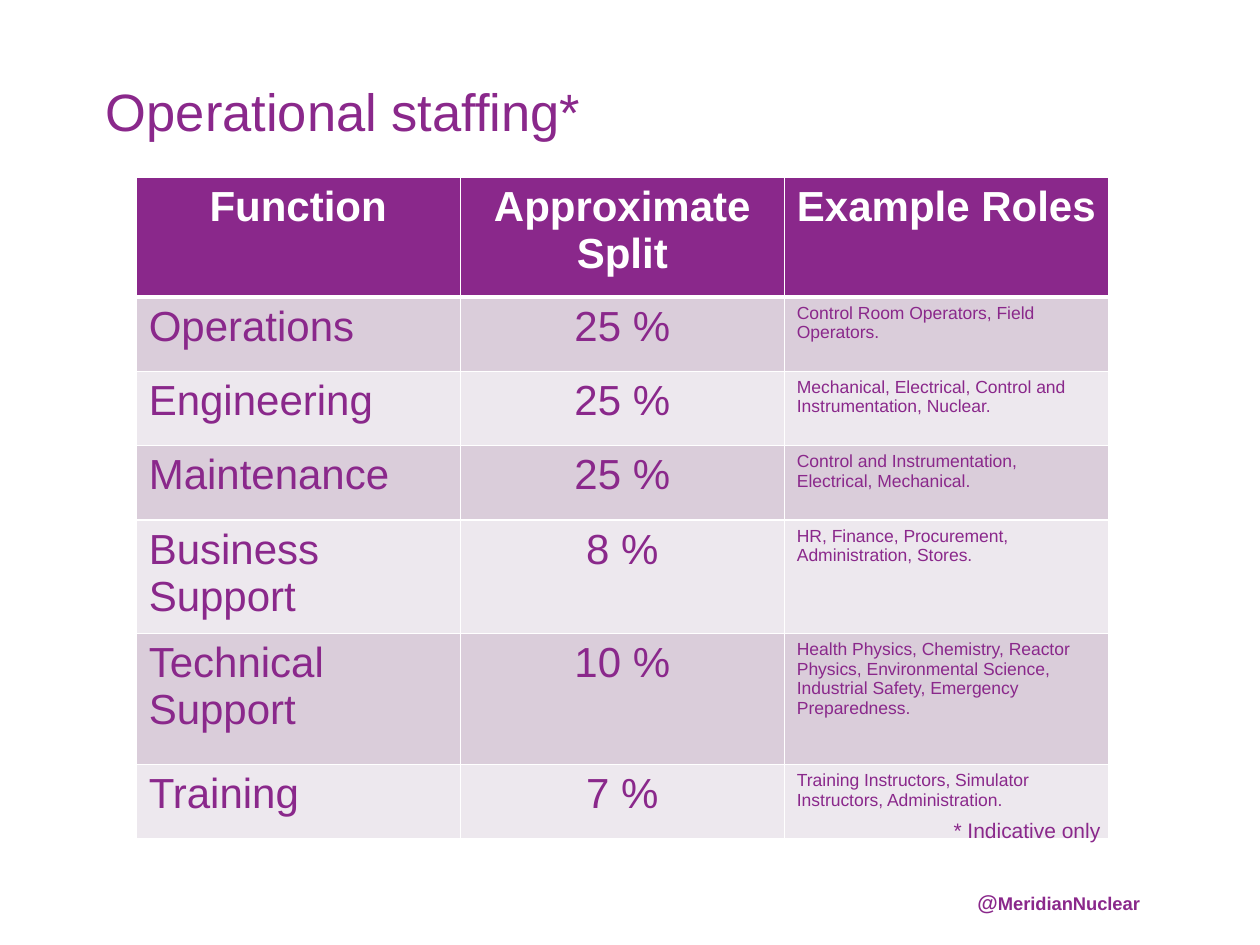
from lxml import etree
from pptx import Presentation
from pptx.dml.color import RGBColor
from pptx.enum import text
from pptx.oxml import ns
from pptx.util import Pt

COLORS = {"purple": "8A288B", "white": "FFFFFF", "odd": "DACDDA", "even": "EDE8EE"}
HEADINGS = ("Function", "Approximate Split", "Example Roles")
STAFFING = [
    ("Operations", "25 %", "Control Room Operators, Field Operators."),
    ("Engineering", "25 %", "Mechanical, Electrical, Control and Instrumentation, Nuclear."),
    ("Maintenance", "25 %", "Control and Instrumentation, Electrical, Mechanical."),
    ("Business Support", "8 %", "HR, Finance, Procurement, Administration, Stores."),
    ("Technical Support", "10 %", "Health Physics, Chemistry, Reactor Physics, Environmental "
     "Science, Industrial Safety, Emergency Preparedness."),
    ("Training", "7 %", "Training Instructors, Simulator Instructors, Administration."),
]
ROW_HEIGHTS = [68.2, 42.5, 42.5, 42.5, 42.5, 75, 42.5]


def style_run(run, size, color="purple", bold=False):
    run.font.name = "Arial"
    run.font.size = Pt(size)
    run.font.bold = bold
    run.font.color.rgb = RGBColor.from_string(COLORS[color])


def set_borders(cell, bottom_width):
    """Draw white cell edges; they must precede the fill in the cell properties."""
    properties = cell._tc.get_or_add_tcPr()
    widths = {"a:lnL": 1, "a:lnR": 1, "a:lnT": 1, "a:lnB": bottom_width}
    for index, (edge, width) in enumerate(widths.items()):
        line = etree.Element(ns.qn(edge), w=str(Pt(width)))
        fill = etree.SubElement(line, ns.qn("a:solidFill"))
        etree.SubElement(fill, ns.qn("a:srgbClr"), val=COLORS["white"])
        properties.insert(index, line)


def add_title(slide, left, top, width, height):
    title = slide.shapes.title
    title.left, title.top, title.width, title.height = map(Pt, (left, top, width, height))
    frame = title.text_frame
    frame.text = "Operational staffing*"
    frame.word_wrap = False
    frame.auto_size = text.MSO_AUTO_SIZE.SHAPE_TO_FIT_TEXT
    frame.vertical_anchor = text.MSO_ANCHOR.TOP
    frame.paragraphs[0].alignment = text.PP_ALIGN.LEFT
    style_run(frame.paragraphs[0].runs[0], 30)


def add_staffing_table(slide, left, top, width):
    rows = [HEADINGS, *STAFFING]
    table = slide.shapes.add_table(len(rows), len(HEADINGS), Pt(left), Pt(top),
                                   Pt(width), Pt(sum(ROW_HEIGHTS))).table
    for r, (row, height) in enumerate(zip(rows, ROW_HEIGHTS)):
        table.rows[r].height = Pt(height)
        header = r == 0
        band = "purple" if header else ("even", "odd")[r % 2]
        for c, wording in enumerate(row):
            cell = table.cell(r, c)
            cell.text_frame.text = wording
            cell.fill.solid()
            cell.fill.fore_color.rgb = RGBColor.from_string(COLORS[band])
            set_borders(cell, 3 if header else 1)
            paragraph = cell.text_frame.paragraphs[0]
            centred = header or c == 1
            paragraph.alignment = text.PP_ALIGN.CENTER if centred else text.PP_ALIGN.LEFT
            size = 10 if c == 2 and not header else 24
            style_run(paragraph.runs[0], size, "white" if header else "purple", header)


def add_note(slide, left, top, width, height, parts, bold=False, wrap=False):
    """Add one line of text made of (wording, size) parts."""
    frame = slide.shapes.add_textbox(Pt(left), Pt(top), Pt(width), Pt(height)).text_frame
    frame.word_wrap = wrap
    frame.auto_size = text.MSO_AUTO_SIZE.SHAPE_TO_FIT_TEXT
    for wording, size in parts:
        run = frame.paragraphs[0].add_run()
        run.text = wording
        style_run(run, size, bold=bold)


def main():
    deck = Presentation()
    deck.slide_width, deck.slide_height = Pt(720), Pt(540)
    slide = deck.slides.add_slide(deck.slide_layouts[5])
    add_note(slide, 551.5, 504.7, 120.2, 21.6,
             [("@", 12), ("MeridianNuclear", 10.5)], bold=True, wrap=True)
    add_title(slide, 53.3, 41.8, 288.7, 43.9)
    add_staffing_table(slide, 77.8, 101.5, 555.6)
    add_note(slide, 537.8, 463.7, 99.4, 21.6, [("* Indicative only", 12)])
    deck.save("out.pptx")


if __name__ == "__main__":
    main()
